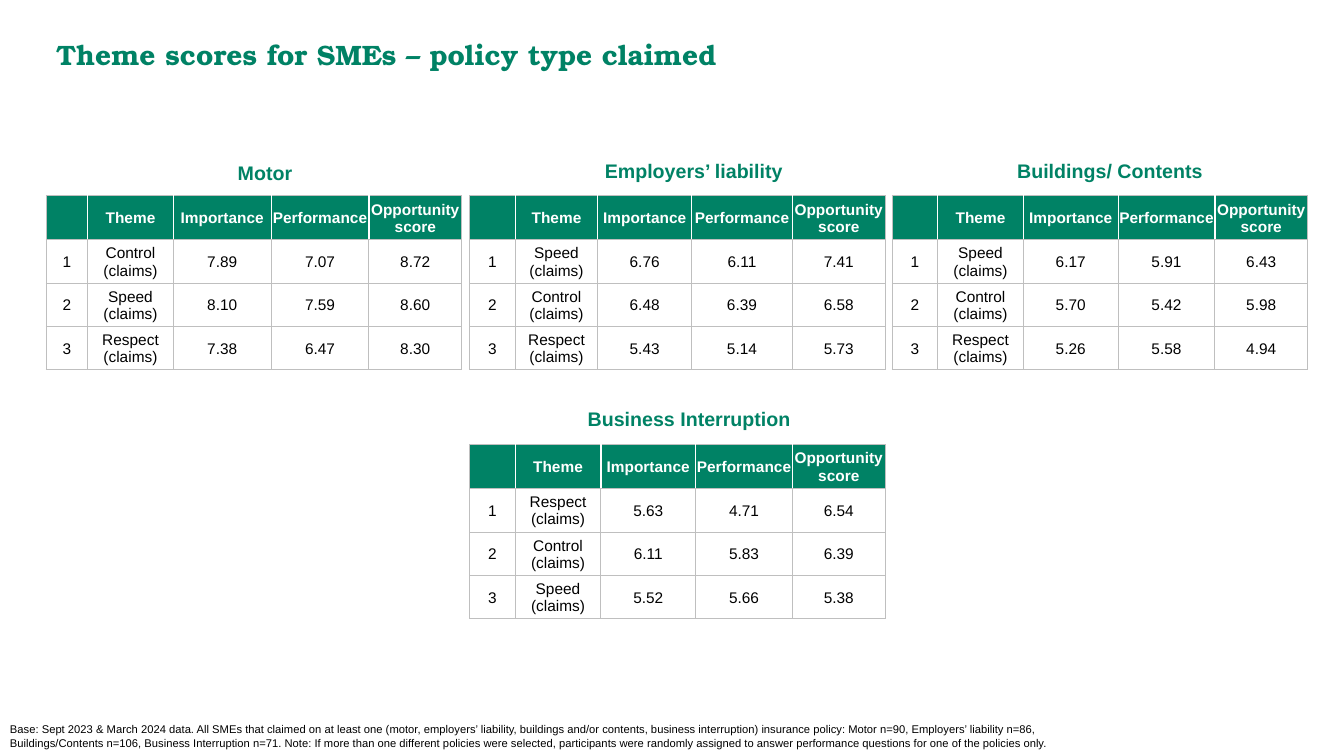
from lxml.etree import SubElement
from pptx import Presentation
from pptx.dml.color import RGBColor
from pptx.enum.text import MSO_ANCHOR, MSO_AUTO_SIZE, PP_ALIGN
from pptx.oxml.ns import qn
from pptx.util import Inches, Pt

GREEN = RGBColor(0x00, 0x82, 0x65)
GREY = RGBColor(0xBF, 0xBF, 0xBF)
WHITE = RGBColor(0xFF, 0xFF, 0xFF)
BLACK = RGBColor(0x00, 0x00, 0x00)

HEADERS = ["", "Theme", "Importance", "Performance", "Opportunity score"]
ROW_HEIGHTS = [0.44, 0.43, 0.43, 0.43]
WIDE_THEME = [0.45, 0.85, 0.94, 0.96, 0.92]

POLICIES = [
    ("Motor", (2.26, 1.55, 2.07), (0.46, 1.94), [0.41, 0.85, 0.97, 0.97, 0.92],
     [("Control", "7.89", "7.07", "8.72"),
      ("Speed", "8.10", "7.59", "8.60"),
      ("Respect", "7.38", "6.47", "8.30")]),
    ("Employers’ liability", (5.9, 1.53, 2.07), (4.66, 1.94), [0.45, 0.82, 0.93, 1, 0.92],
     [("Speed", "6.76", "6.11", "7.41"),
      ("Control", "6.48", "6.39", "6.58"),
      ("Respect", "5.43", "5.14", "5.73")]),
    ("Buildings/ Contents", (9.99, 1.53, 2.07), (8.85, 1.94), WIDE_THEME,
     [("Speed", "6.17", "5.91", "6.43"),
      ("Control", "5.70", "5.42", "5.98"),
      ("Respect", "5.26", "5.58", "4.94")]),
    ("Business Interruption", (5.73, 3.99, 2.23), (4.66, 4.41), WIDE_THEME,
     [("Respect", "5.63", "4.71", "6.54"),
      ("Control", "6.11", "5.83", "6.39"),
      ("Speed", "5.52", "5.66", "5.38")]),
]

BASE_NOTE = (
    "Base: Sept 2023 & March 2024 data. All SMEs that claimed on at least one "
    "(motor, employers’ liability, buildings and/or contents, business interruption) "
    "insurance policy: Motor n=90, Employers’ liability n=86, Buildings/Contents n=106, "
    "Business Interruption n=71. Note: If more than one different policies were selected, "
    "participants were randomly assigned to answer performance questions for one of the "
    "policies only."
)


class ThemeScoreSlide:
    body_font = "Arial"
    title_font = "TeX Gyre Bonum"

    def __init__(self, prs):
        self.s = prs.slides.add_slide(prs.slide_layouts[5])

    def style(self, p, size, color, bold=False, name=None, align=PP_ALIGN.LEFT):
        p.alignment = align
        p.font.name = name or self.body_font
        p.font.size = Pt(size)
        p.font.bold = bold
        p.font.color.rgb = color

    def title(self, text, left, top, width, height):
        sp = self.s.shapes.title
        sp.left, sp.top = Inches(left), Inches(top)
        sp.width, sp.height = Inches(width), Inches(height)
        tf = sp.text_frame
        tf.text = text
        tf.word_wrap = True
        tf.auto_size = MSO_AUTO_SIZE.SHAPE_TO_FIT_TEXT
        tf.vertical_anchor = MSO_ANCHOR.TOP
        self.style(tf.paragraphs[0], 20, GREEN, True, self.title_font)

    def text(self, text, left, top, width, height, size, color, bold=False):
        sp = self.s.shapes.add_textbox(Inches(left), Inches(top), Inches(width), Inches(height))
        tf = sp.text_frame
        tf.word_wrap = True
        tf.text = text
        self.style(tf.paragraphs[0], size, color, bold)

    def border(self, cell, side, color, width):
        ln = SubElement(cell._tc.get_or_add_tcPr(), qn(f"a:ln{side}"), w=str(Pt(width)))
        fill = SubElement(ln, qn("a:solidFill"))
        SubElement(fill, qn("a:srgbClr"), val=str(color))

    def cell(self, cell, text, row, col):
        header = row == 0
        cell.text = text
        cell.vertical_anchor = MSO_ANCHOR.MIDDLE
        if not header or col > 1:
            cell.margin_left = cell.margin_right = cell.margin_top = Inches(0.01)
            cell.margin_bottom = 0
        self.style(cell.text_frame.paragraphs[0], 11, WHITE if header else BLACK,
                   header, align=PP_ALIGN.CENTER)
        inner = {"L": col > 0, "R": col < len(HEADERS) - 1}
        for side in "LRTB":
            if header and inner.get(side):
                self.border(cell, side, WHITE, 1)
            else:
                self.border(cell, side, GREY, 0.75)
        if header:
            cell.fill.solid()
            cell.fill.fore_color.rgb = GREEN
        else:
            cell.fill.background()

    def table(self, scores, left, top, widths):
        rows = [HEADERS] + [
            [str(rank), f"{theme} (claims)", *values]
            for rank, (theme, *values) in enumerate(scores, 1)
        ]
        table = self.s.shapes.add_table(
            len(rows), len(HEADERS), Inches(left), Inches(top),
            Inches(sum(widths)), Inches(sum(ROW_HEIGHTS))).table
        table.horz_banding = False
        for column, width in zip(table.columns, widths):
            column.width = Inches(width)
        for row, height in zip(table.rows, ROW_HEIGHTS):
            row.height = Inches(height)
        for r, values in enumerate(rows):
            for c, value in enumerate(values):
                self.cell(table.cell(r, c), value, r, c)


def main():
    prs = Presentation()
    prs.slide_width, prs.slide_height = Inches(13.33), Inches(7.5)
    slide = ThemeScoreSlide(prs)
    slide.title("Theme scores for SMEs – policy type claimed", 0.46, 0.32, 12.28, 0.44)
    for name, heading, origin, widths, scores in POLICIES:
        slide.text(name, *heading, 0.34, 14, GREEN, True)
        slide.table(scores, *origin, widths)
    slide.text(BASE_NOTE, 0, 7.12, 10.72, 0.38, 8, BLACK)
    prs.save("out.pptx")


if __name__ == "__main__":
    main()
